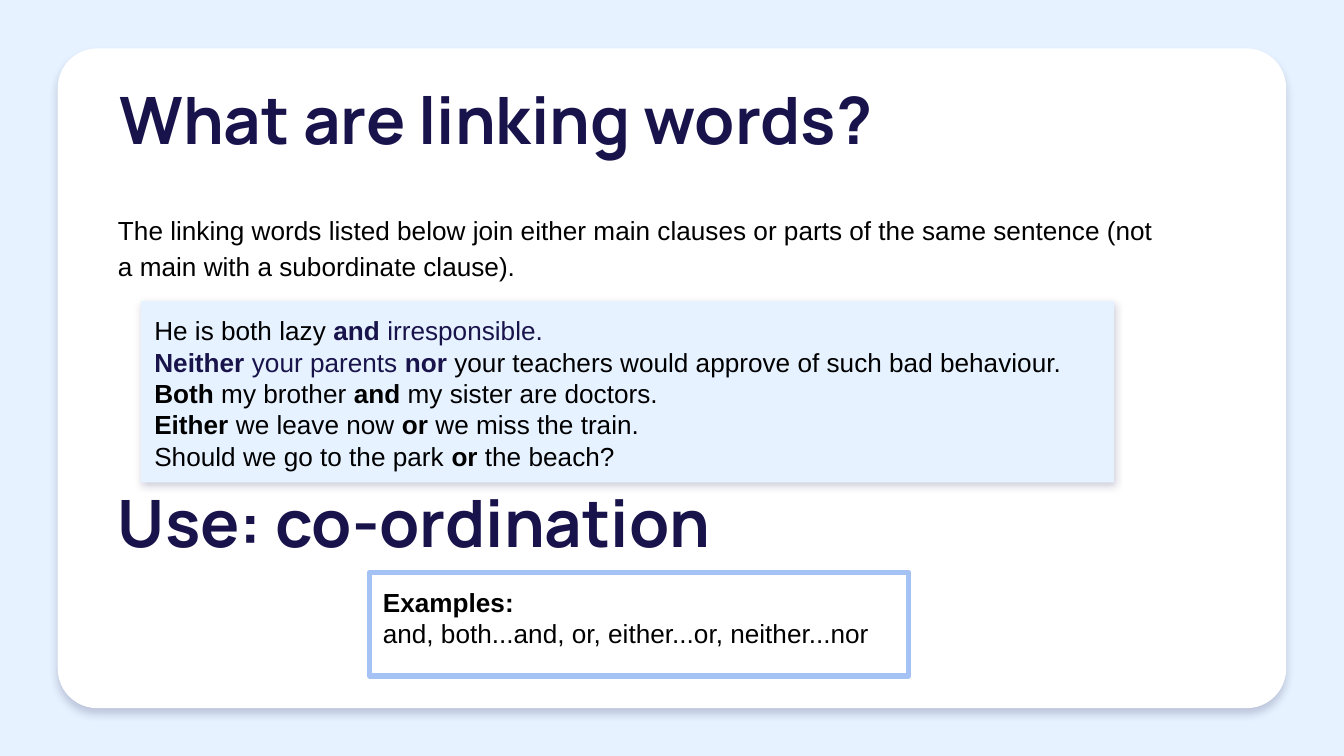
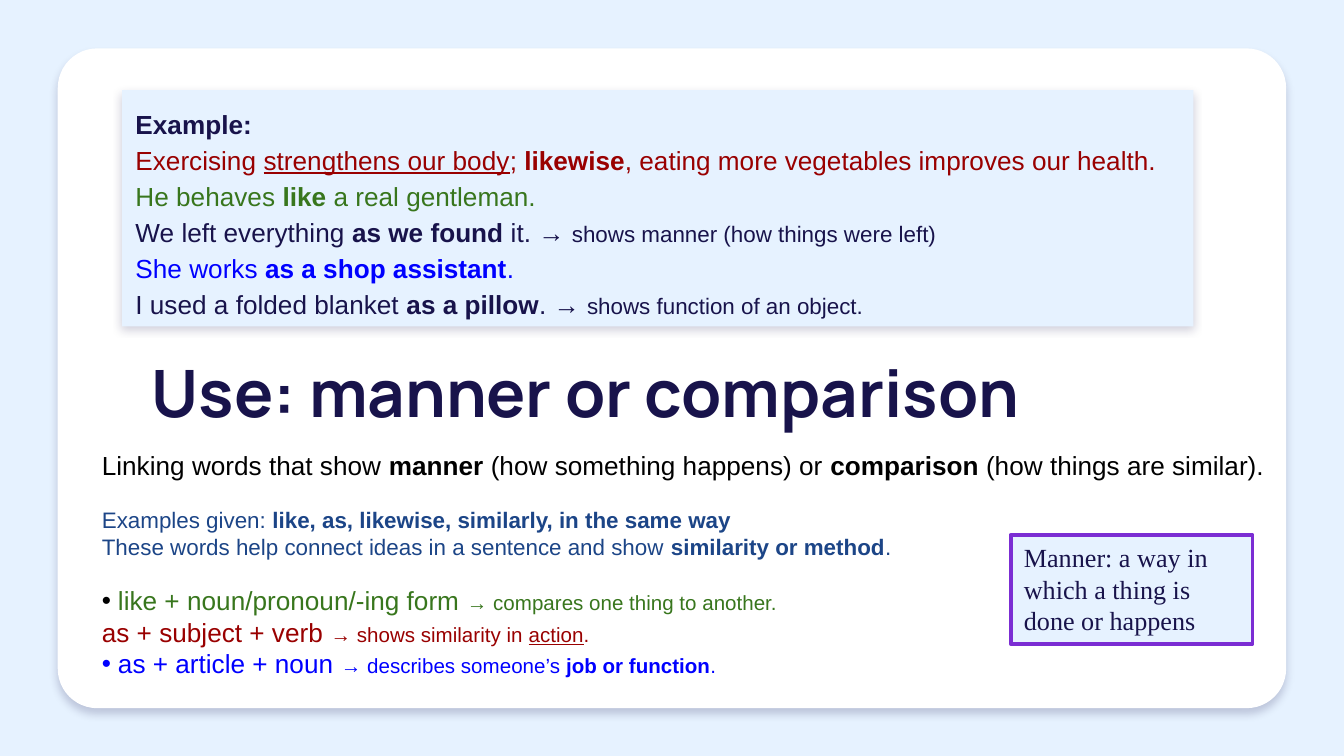
from lxml import etree
from pptx import Presentation
from pptx.dml.color import RGBColor
from pptx.enum.shapes import MSO_SHAPE as SHAPE
from pptx.enum.text import MSO_ANCHOR as ANCHOR, PP_ALIGN as ALIGN
from pptx.oxml import parse_xml
from pptx.oxml.ns import nsdecls, qn
from pptx.util import Inches, Pt

COLORS = {
    "navy": "18134B", "pale": "E6F2FF", "white": "FFFFFF", "black": "000000",
    "sky": "A4C2F4", "purple": "7B2DD3", "red": "990000", "green": "38761D",
    "blue": "0000FF", "steel": "1C4587",
}
RGB = {name: RGBColor.from_string(value) for name, value in COLORS.items()}
BOLD = {"bold": True}
UNDERLINE = {"underline": True}
SMALL = {"size": 12}
TINY = {"size": 11}
TITLE = {"size": 35, "font": "Manrope", "color": "navy", "bold": True}


def add_shape(s, at, kind=SHAPE.RECTANGLE, fill=None, line=None, width=0, drop=None):
    """Add a shape; drop is the distance of its soft shadow in points."""
    sp = s.shapes.add_shape(kind, *map(Inches, at))
    sp.shadow.inherit = False
    if fill:
        sp.fill.solid()
        sp.fill.fore_color.rgb = RGB[fill]
    else:
        sp.fill.background()
    if line:
        sp.line.color.rgb = RGB[line]
        sp.line.width = Pt(width)
    else:
        sp.line.fill.background()
    if drop:
        sp._element.spPr.find(qn("a:effectLst")).append(parse_xml(
            f'<a:outerShdw {nsdecls("a")} blurRad="{Pt(4.5)}" dist="{Pt(drop)}" '
            f'dir="5400000" algn="bl" rotWithShape="0"><a:srgbClr val="{COLORS["navy"]}">'
            '<a:alpha val="20000"/></a:srgbClr></a:outerShdw>'))
    return sp


def write(sp, paragraphs, size=14, font="Arial", color="black", bold=False,
          spacing=1.0, align=ALIGN.LEFT, inset=0.1):
    """Write paragraphs of runs; a run is text or (text, format).

    A dict in a paragraph sets its color, size, space before and bullet color.
    """
    tf = sp.text_frame
    tf.word_wrap = True
    tf.vertical_anchor = ANCHOR.TOP
    tf.margin_left = tf.margin_right = Inches(0.1)
    tf.margin_top = tf.margin_bottom = Inches(inset)
    for i, runs in enumerate(paragraphs):
        p = tf.paragraphs[0] if i == 0 else tf.add_paragraph()
        p.alignment, p.line_spacing = align, spacing
        base = {"size": size, "font": font, "color": color, "bold": bold}
        for run in runs:
            if isinstance(run, dict):
                base.update(run)
                if "before" in run:
                    p.space_before = Pt(run["before"])
                if "bullet" in run:
                    pPr = p._p.get_or_add_pPr()
                    pPr.set("marL", str(Inches(0.12)))
                    pPr.set("indent", str(-Inches(0.12)))
                    clr = etree.SubElement(pPr, qn("a:buClr"))
                    etree.SubElement(clr, qn("a:srgbClr"), val=COLORS[run["bullet"]])
                    etree.SubElement(pPr, qn("a:buFont"), typeface="Arial")
                    etree.SubElement(pPr, qn("a:buChar"), char="•")
                continue
            text, extra = (run, {}) if isinstance(run, str) else run
            fmt = {**base, **extra}
            r = p.add_run()
            r.text = text
            r.font.size = Pt(fmt["size"])
            r.font.name = fmt["font"]
            r.font.bold = fmt["bold"]
            r.font.underline = fmt.get("underline")
            r.font.color.rgb = RGB[fmt["color"]]


prs = Presentation()
prs.slide_width = Inches(10)
prs.slide_height = Inches(10) * 9 // 16
slides = []
for _ in range(2):
    s = prs.slides.add_slide(prs.slide_layouts[6])
    s.background.fill.solid()
    s.background.fill.fore_color.rgb = RGB["pale"]
    card = add_shape(s, (0.43, 0.36, 9.14, 4.91), SHAPE.ROUNDED_RECTANGLE,
                     fill="white", drop=3.8)
    card.adjustments[0] = 0.06
    slides.append(s)
coordination, manner = slides

# Headings
for s, at, text, align in [
    (coordination, (0.79, 0.49, 8.43, 0.63), "What are linking words?", ALIGN.LEFT),
    (coordination, (0.78, 3.49, 8.43, 0.63), "Use: co-ordination", ALIGN.LEFT),
    (manner, (0, 2.52, 8.72, 0.63), "Use: manner or comparison", ALIGN.CENTER),
]:
    write(s.shapes.add_textbox(*map(Inches, at)), [[text]], align=align, **TITLE)

# Slide 1: co-ordination
intro = coordination.shapes.add_textbox(*map(Inches, (0.78, 1.46, 7.94, 0.77)))
write(intro, [["The linking words listed below join either main clauses or parts of "
               "the same sentence (not a main with a subordinate clause)."]], spacing=1.15)

navy = {"color": "navy"}
navy_bold = {**navy, **BOLD}
sentences = add_shape(coordination, (1.05, 2.24, 7.24, 1.35), fill="pale", drop=1.5)
write(sentences, [
    ["He is both lazy ", ("and", navy_bold), (" irresponsible.", navy)],
    [("Neither ", navy_bold), ("your parents ", navy), ("nor ", navy_bold),
     "your teachers would approve of such bad behaviour."],
    [("Both", BOLD), " my brother ", ("and", BOLD), " my sister are doctors."],
    [("Either", BOLD), " we leave now ", ("or", BOLD), " we miss the train."],
    ["Should we go to the park ", ("or", BOLD), " the beach?"],
])

examples = add_shape(coordination, (2.75, 4.26, 4.01, 0.77), line="sky", width=3)
write(examples, [[("Examples:", BOLD)],
                 ["and, both...and, or, either...or, neither...nor"]])

# Slide 2: manner or comparison
sentences = add_shape(manner, (0.91, 0.67, 7.97, 1.76), fill="pale", drop=1.5)
write(sentences, [
    [("Example:", BOLD)],
    [{"color": "red"}, "Exercising ", ("strengthens our body", UNDERLINE), "; ",
     ("likewise", BOLD), ", eating more vegetables improves our health."],
    [{"color": "green"}, "He behaves ", ("like", BOLD), " a real gentleman."],
    ["We left everything ", ("as we found", BOLD), " it. → ",
     ("shows manner (how things were left)", SMALL)],
    [{"color": "blue"}, "She works ", ("as a shop assistant", BOLD), "."],
    ["I used a folded blanket ", ("as a pillow", BOLD), ". → ",
     ("shows function of an object.", SMALL)],
], color="navy", spacing=1.15)

rules = manner.shapes.add_textbox(*map(Inches, (0.66, 3.24, 9.34, 1.55)))
write(rules, [
    ["Linking words that show ", ("manner", BOLD), " (how something happens) or ",
     ("comparison", BOLD), " (how things are similar)."],
    [{"color": "steel", "size": 12, "before": 14}, "Examples given: ",
     ("like, as, likewise, similarly, in the same way", BOLD)],
    [{"color": "steel", "size": 12},
     "These words help connect ideas in a sentence and show ",
     ("similarity or method", BOLD), "."],
    [{"color": "green", "bullet": "black", "before": 13.2},
     "like + noun/pronoun/-ing form ", ("→ compares one thing to another.", TINY)],
    [{"color": "red"}, "as + subject + verb ", ("→ shows similarity in ", TINY),
     ("action", {**TINY, **UNDERLINE}), (".", TINY)],
    [{"color": "blue", "bullet": "blue"}, "as + article + noun ",
     ("→ describes someone’s ", TINY), ("job or function", {**TINY, **BOLD}), (".", TINY)],
])

definition = add_shape(manner, (7.52, 3.98, 1.8, 0.81), fill="pale", line="purple", width=2)
write(definition, [["Manner: a way in which a thing is done or happens"]],
      font="Times New Roman", color="navy", inset=0.05)

prs.save("out.pptx")
